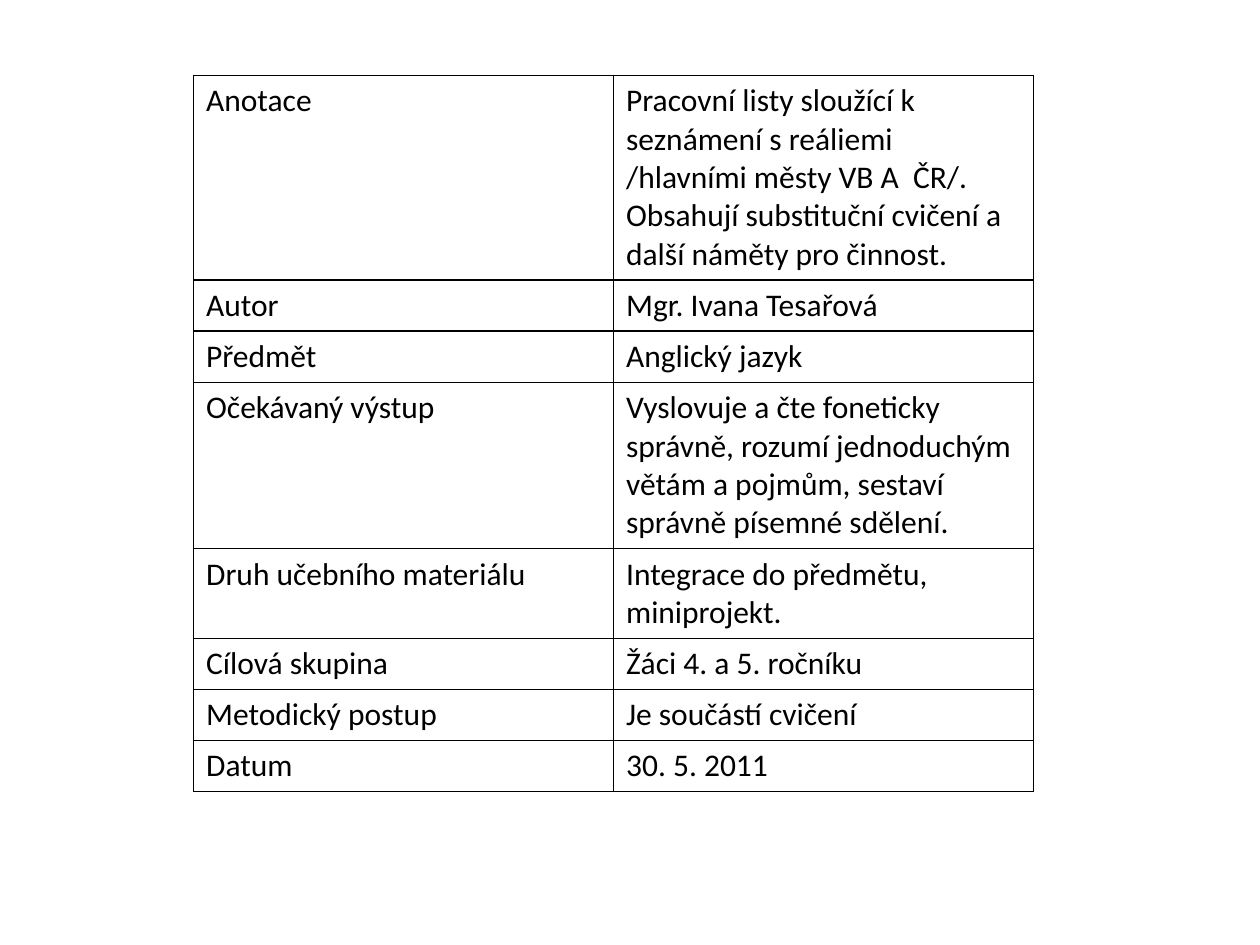
from lxml.etree import SubElement
from pptx import Presentation
from pptx.dml.color import RGBColor
from pptx.oxml.ns import qn
from pptx.util import Pt

BLACK = RGBColor(0, 0, 0)

# Label and value of each row
DETAILS = [
    ("Anotace", "Pracovní listy sloužící k seznámení s reáliemi /hlavními městy "
                "VB A  ČR/. Obsahují substituční cvičení a další náměty pro činnost."),
    ("Autor", "Mgr. Ivana Tesařová"),
    ("Předmět", "Anglický jazyk"),
    ("Očekávaný výstup", "Vyslovuje a čte foneticky správně, rozumí jednoduchým "
                         "větám a pojmům, sestaví správně písemné sdělení."),
    ("Druh učebního materiálu", "Integrace do předmětu, miniprojekt."),
    ("Cílová skupina", "Žáci 4. a 5. ročníku"),
    ("Metodický postup", "Je součástí cvičení"),
    ("Datum", "30. 5. 2011"),
]


class SlideBuilder:
    """Holds the text and border style and the slide being filled."""

    font = "Calibri"
    size = Pt(18)
    color = BLACK
    border = Pt(1)

    def __init__(self, slide):
        self.slide = slide

    def table(self, rows, left, top, width, height, row_height):
        frame = self.slide.shapes.add_table(
            len(rows), len(rows[0]), left, top, width, height)
        tbl = frame.table
        tbl.first_row = tbl.horz_banding = False
        for row, texts in zip(tbl.rows, rows):
            row.height = row_height
            for cell, text in zip(row.cells, texts):
                self.cell(cell, text)
        frame.height = height  # rows grow with their text

    def cell(self, cell, text):
        r = cell.text_frame.paragraphs[0].add_run()
        r.text = text
        r.font.name = self.font
        r.font.size = self.size
        r.font.color.rgb = self.color
        self.borders(cell)
        cell.fill.background()

    def borders(self, cell):
        tc_pr = cell._tc.get_or_add_tcPr()
        for side in ("a:lnL", "a:lnR", "a:lnT", "a:lnB"):
            ln = SubElement(tc_pr, qn(side), w=str(self.border))
            fill = SubElement(ln, qn("a:solidFill"))
            SubElement(fill, qn("a:srgbClr"), val=str(self.color))


def main():
    prs = Presentation()
    prs.slide_width, prs.slide_height = Pt(720), Pt(540)
    s = prs.slides.add_slide(prs.slide_layouts[6])

    # Details table
    SlideBuilder(s).table(DETAILS, Pt(110.6), Pt(43), Pt(480), Pt(405.4), Pt(29.2))

    prs.save("out.pptx")


if __name__ == "__main__":
    main()
